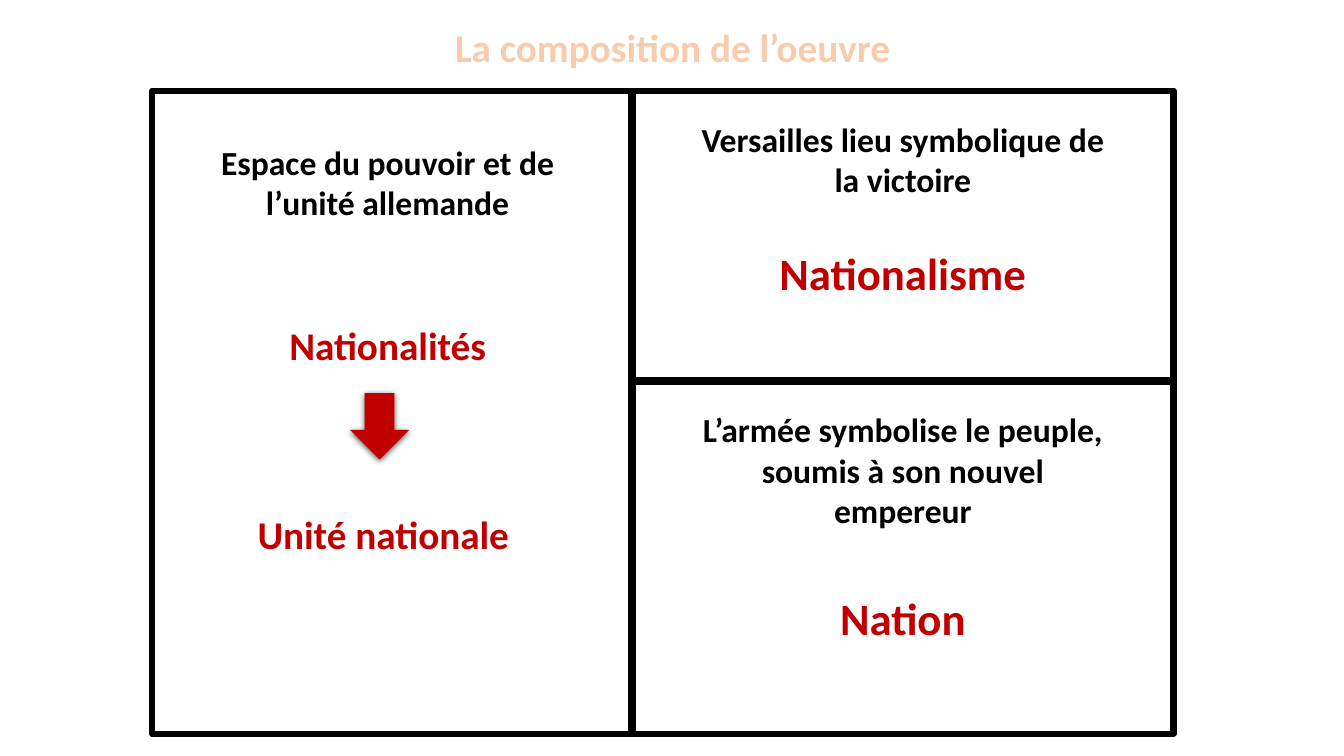
from lxml.etree import SubElement as Sub
from pptx import Presentation
from pptx.dml.color import RGBColor as RGB
from pptx.enum.shapes import MSO_CONNECTOR as Conn, MSO_SHAPE as Kind
from pptx.enum.text import MSO_AUTO_SIZE as Fit, PP_ALIGN as Align
from pptx.oxml.ns import qn
from pptx.util import Pt

PX = 9144
FONT = "Calibri"
INK = {
    "black": "000000",
    "red": "C00000",
    "peach": "F8CBAD",
    "orange": "ED7D31",
}
LEFT, TOP, RIGHT, BASE = 151, 90, 1164, 728
SPLIT, MID = 627, 378


def hue(name):
    return RGB.from_string(INK[name])


def emu(*sizes):
    return [size * PX for size in sizes]


def edge(run, name, width):
    line = run.font._element.makeelement(qn("a:ln"), w=str(Pt(width)))
    fill = Sub(line, qn("a:solidFill"))
    Sub(fill, qn("a:srgbClr"), val=INK[name])
    run.font._element.insert(0, line)


def text(slide, box, *lines, size=24, color="black", gap=0, rim=None):
    frame = slide.shapes.add_textbox(*emu(*box)).text_frame
    frame.word_wrap = True
    frame.auto_size = Fit.SHAPE_TO_FIT_TEXT
    for i, words in enumerate(lines):
        para = frame.add_paragraph() if i else frame.paragraphs[0]
        para.alignment = Align.CENTER
        if i:
            para.space_before = Pt(gap)
        run = para.add_run()
        run.text = words
        run.font.name = FONT
        run.font.size = Pt(size)
        run.font.bold = True
        run.font.color.rgb = hue(color)
        if rim:
            edge(run, rim, 1.75)


def frame(slide, box):
    shape = slide.shapes.add_shape(Kind.RECTANGLE, *emu(*box))
    shape.shadow.inherit = False
    shape.fill.background()
    shape.line.color.rgb = hue("black")
    shape.line.width = Pt(4.5)


def rule(slide, *ends):
    line = slide.shapes.add_connector(Conn.STRAIGHT, *emu(*ends))
    line.line.color.rgb = hue("black")
    line.line.width = Pt(6)
    Sub(line._element.spPr, qn("a:effectLst"))


def arrow(slide, box):
    shape = slide.shapes.add_shape(Kind.DOWN_ARROW, *emu(*box))
    shape.shadow.inherit = False
    shape.fill.solid()
    shape.fill.fore_color.rgb = hue("red")
    shape.line.fill.background()
    glow = shape._element.spPr.find(qn("a:effectLst"))
    shade = Sub(glow, qn("a:outerShdw"), blurRad=str(Pt(4.5)),
                dist=str(Pt(1.5)), dir="5400000", rotWithShape="0")
    tint = Sub(shade, qn("a:srgbClr"), val=INK["black"])
    Sub(tint, qn("a:alpha"), val="63000")


def main():
    deck = Presentation()
    deck.slide_width, deck.slide_height = emu(1333, 750)
    slide = deck.slides.add_slide(deck.slide_layouts[6])

    frame(slide, (LEFT, TOP, RIGHT - LEFT, BASE - TOP))
    rule(slide, SPLIT, MID, RIGHT, MID)
    rule(slide, SPLIT, BASE, SPLIT, TOP)

    text(slide, (46, 18, 1242, 57), "La composition de l’oeuvre",
         size=28, color="peach", rim="orange")
    text(slide, (678, 113, 435, 91),
         "Versailles lieu symbolique de la victoire")
    text(slide, (167, 136, 435, 91),
         "Espace du pouvoir et de l’unité allemande")
    text(slide, (678, 401, 435, 131),
         "L’armée symbolise le peuple, soumis à son nouvel empereur")
    text(slide, (167, 314, 435, 246), "Nationalités", "Unité nationale ",
         size=28, color="red", gap=101)
    arrow(slide, (347, 390, 59, 66))
    for top, word in ((581, "Nation"), (239, "Nationalisme")):
        text(slide, (701, top, 389, 64), word, size=32, color="red")

    deck.save("out.pptx")


if __name__ == "__main__":
    main()
